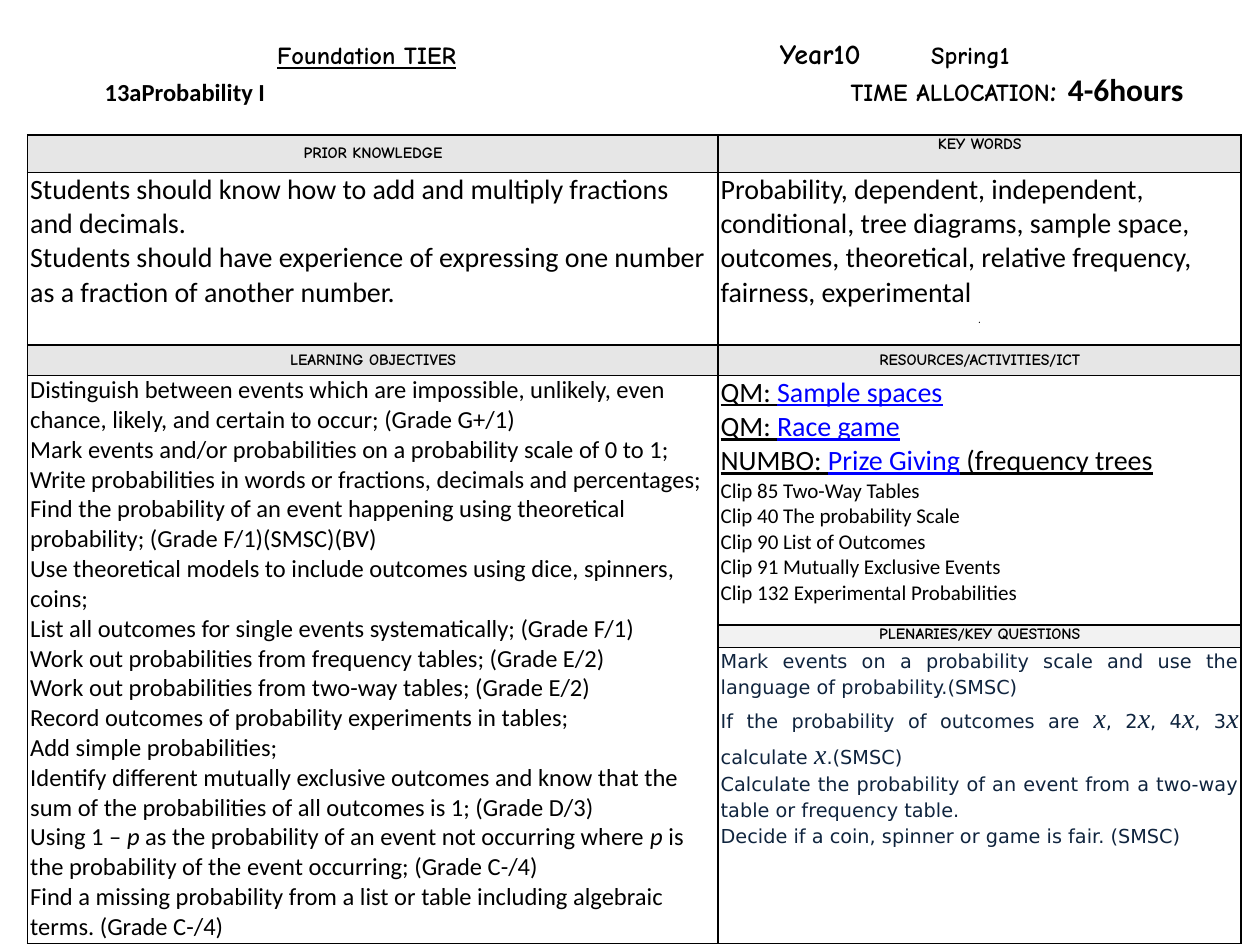
from lxml.etree import SubElement
from pptx import Presentation
from pptx.dml.color import RGBColor
from pptx.enum.text import MSO_ANCHOR, PP_ALIGN
from pptx.oxml.ns import qn
from pptx.util import Inches, Pt

COLORS = {"ink": "000000", "link": "0000FF", "navy": "0F243E",
          "heading": "E6E6E6", "plenary": "F2F2F2"}

HEADING = dict(font="Comic Neue", size=9, bold=True)
BODY = dict(font="Calibri", size=16)
OBJECTIVE = dict(font="Calibri", size=14)
CLIP = dict(font="Calibri", size=12)
QUESTION = dict(font="DejaVu Sans", size=11, color="navy")
TITLE = dict(font="Comic Neue", size=14, bold=True)

ITALIC = dict(italic=True)
LINK = dict(color="link")
X = ("x", dict(font="Times New Roman", size=16, italic=True))

PRIOR_KNOWLEDGE = [
    "Students should know how to add and multiply fractions and decimals.",
    "Students should have experience of expressing one number as a fraction of another number.",
]
KEY_WORDS = ("Probability, dependent, independent, conditional, tree diagrams, sample space, "
             "outcomes, theoretical, relative frequency, fairness, experimental")
OBJECTIVES = [
    "Distinguish between events which are impossible, unlikely, even chance, likely, "
    "and certain to occur; (Grade G+/1)",
    "Mark events and/or probabilities on a probability scale of 0 to 1;",
    "Write probabilities in words or fractions, decimals and percentages;",
    "Find the probability of an event happening using theoretical probability; "
    "(Grade F/1)(SMSC)(BV)",
    "Use theoretical models to include outcomes using dice, spinners, coins;",
    "List all outcomes for single events systematically; (Grade F/1)",
    "Work out probabilities from frequency tables; (Grade E/2)",
    "Work out probabilities from two-way tables; (Grade E/2)",
    "Record outcomes of probability experiments in tables;",
    "Add simple probabilities;",
    "Identify different mutually exclusive outcomes and know that the sum of the "
    "probabilities of all outcomes is 1; (Grade D/3)",
    ["Using 1 – ", ("p", ITALIC), " as the probability of an event not occurring where ",
     ("p", ITALIC), " is the probability of the event occurring; (Grade C-/4)"],
    "Find a missing probability from a list or table including algebraic terms. (Grade C-/4)",
]
RESOURCES = [
    ["QM: ", ("Sample spaces", LINK)],
    ["QM: ", ("Race game", LINK)],
    ["NUMBO: ", ("Prize Giving", LINK), " (frequency trees"],
]
CLIPS = [
    "Clip 85 Two-Way Tables",
    "Clip 40 The probability Scale",
    "Clip 90 List of Outcomes",
    "Clip 91 Mutually Exclusive Events",
    "Clip 132 Experimental Probabilities",
]
QUESTIONS = [
    "Mark events on a probability scale and use the language of probability.(SMSC)",
    ["If the probability of outcomes are ", X, ", 2", X, ", 4", X, ", 3", X,
     " calculate ", X, ".(SMSC)"],
    "Calculate the probability of an event from a two-way table or frequency table.",
    "Decide if a coin, spinner or game is fair. (SMSC)",
]


def style_font(target, font=None, size=None, color=None, **flags):
    if font:
        target.name = font
    if size:
        target.size = Pt(size)
    if color:
        target.color.rgb = RGBColor.from_string(COLORS[color])
    for flag, value in flags.items():
        setattr(target, flag, value)


def write(frame, lines, style, align=PP_ALIGN.LEFT, spacing=None):
    """Append lines; a line is a string or a list of strings and (text, style) pairs."""
    written = []
    for line in lines:
        first = frame.paragraphs[0]
        paragraph = frame.add_paragraph() if first.runs else first
        paragraph.alignment = align
        paragraph.line_spacing = spacing
        style_font(paragraph.font, **{"color": "ink", **style})
        for part in [line] if isinstance(line, str) else line:
            text, override = (part, {}) if isinstance(part, str) else part
            run = paragraph.add_run()
            run.text = text
            style_font(run.font, **override)
        written.append(paragraph)
    return written


def set_tab_stops(paragraph, stops):
    properties = paragraph._p.get_or_add_pPr()
    tab_list = SubElement(properties, qn("a:tabLst"))
    for stop in stops:
        SubElement(tab_list, qn("a:tab"), pos=str(Inches(stop)), algn="l")
    properties.find(qn("a:defRPr")).addprevious(tab_list)


def set_borders(cell):
    properties = cell._tc.get_or_add_tcPr()
    for position, side in enumerate(("a:lnL", "a:lnR", "a:lnT", "a:lnB")):
        line = SubElement(properties, qn(side), w=str(Pt(1)))
        fill = SubElement(line, qn("a:solidFill"))
        SubElement(fill, qn("a:srgbClr"), val=COLORS["ink"])
        properties.insert(position, line)


def add_title_lines(slide, left, top, width, height):
    frame = slide.shapes.add_textbox(left, top, width, height).text_frame
    frame.word_wrap = True
    frame.margin_left = frame.margin_right = Inches(0.09)
    frame.margin_top = frame.margin_bottom = Inches(0.04)
    course, topic = write(frame, [
        ["\t", ("Foundation TIER", dict(underline=True)), "\t",
         ("Year10", dict(size=16)), "\tSpring1"],
        ["\t", ("13aProbability I", dict(font="Calibri")), "\tTIME ALLOCATION",
         (": ", dict(size=18)), ("4-6hours", dict(font="Calibri", size=18))],
    ], TITLE)
    set_tab_stops(course, [1.89, 5.88, 7.08])
    set_tab_stops(topic, [0.52, 6.44])


def add_heading(cell, text, fill="heading", anchor=MSO_ANCHOR.MIDDLE):
    cell.fill.solid()
    cell.fill.fore_color.rgb = RGBColor.from_string(COLORS[fill])
    cell.vertical_anchor = anchor
    write(cell.text_frame, [text], HEADING, PP_ALIGN.CENTER)


def add_plan_table(slide, left, top, column_widths, row_heights):
    table = slide.shapes.add_table(
        len(row_heights), len(column_widths), left, top,
        Inches(sum(column_widths)), Inches(sum(row_heights))).table
    table.first_row = table.horz_banding = False
    for column, width in zip(table.columns, column_widths):
        column.width = Inches(width)
    for row, height in zip(table.rows, row_heights):
        row.height = Inches(height)
    for cell in table.iter_cells():
        cell.margin_left = cell.margin_right = Inches(0.02)
        cell.margin_top = cell.margin_bottom = 0
        cell.fill.background()
        set_borders(cell)
    table.cell(3, 0).merge(table.cell(5, 0))

    add_heading(table.cell(0, 0), "PRIOR KNOWLEDGE")
    add_heading(table.cell(0, 1), "KEY WORDS", anchor=MSO_ANCHOR.TOP)
    add_heading(table.cell(2, 0), "LEARNING OBJECTIVES")
    add_heading(table.cell(2, 1), "RESOURCES/ACTIVITIES/ICT")
    add_heading(table.cell(4, 1), "PLENARIES/KEY QUESTIONS", "plenary", MSO_ANCHOR.TOP)

    write(table.cell(1, 0).text_frame, PRIOR_KNOWLEDGE, BODY)
    key_words = table.cell(1, 1).text_frame
    write(key_words, [KEY_WORDS], BODY)
    write(key_words, ["."], dict(font="Comic Neue", size=9), PP_ALIGN.CENTER)
    write(table.cell(3, 0).text_frame, OBJECTIVES, OBJECTIVE)
    resources = table.cell(3, 1).text_frame
    write(resources, RESOURCES, dict(BODY, underline=True))
    write(resources, CLIPS, CLIP)
    write(table.cell(5, 1).text_frame, QUESTIONS, QUESTION, PP_ALIGN.JUSTIFY, 1.15)


def main():
    presentation = Presentation()
    presentation.slide_width, presentation.slide_height = Inches(10), Inches(7.5)
    slide = presentation.slides.add_slide(presentation.slide_layouts[6])
    add_plan_table(slide, Inches(0.22), Inches(1.07), [5.48, 4.15],
                   [0.3, 1.37, 0.24, 1.98, 0.18, 2.35])
    add_title_lines(slide, Inches(0.22), Inches(0.25), Inches(9.78), Inches(1.25))
    presentation.save("out.pptx")


if __name__ == "__main__":
    main()
